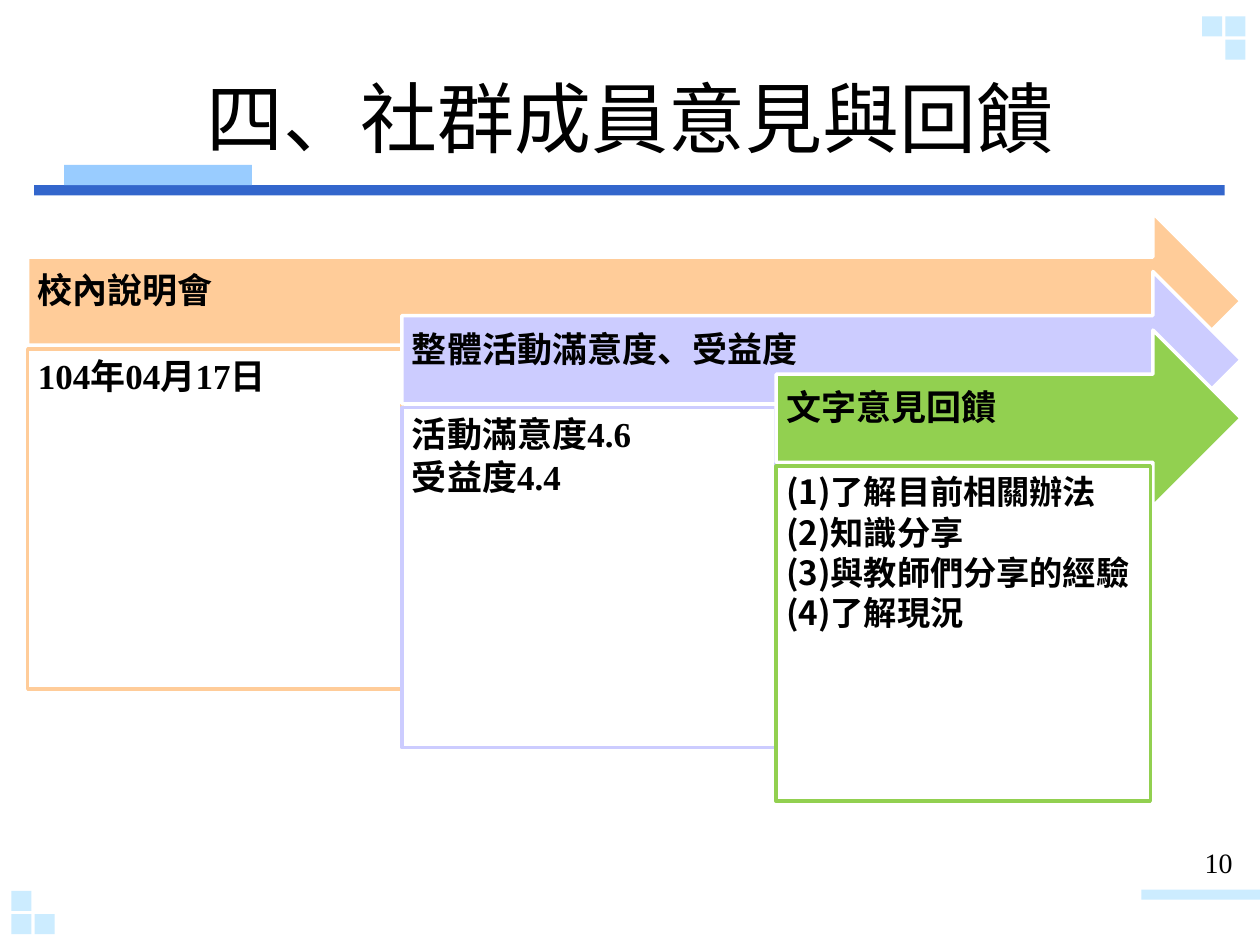
from pptx import Presentation
from pptx.dml.color import RGBColor
from pptx.enum.shapes import MSO_SHAPE
from pptx.enum.text import MSO_ANCHOR, PP_ALIGN
from pptx.oxml.ns import qn
from pptx.util import Inches, Pt

RECT, ARROW = MSO_SHAPE.RECTANGLE, MSO_SHAPE.RIGHT_ARROW
TOP, MIDDLE = MSO_ANCHOR.TOP, MSO_ANCHOR.MIDDLE
LEFT, CENTER, RIGHT = PP_ALIGN.LEFT, PP_ALIGN.CENTER, PP_ALIGN.RIGHT
CJK, LATIN = "Noto Sans CJK SC", "Times New Roman"
WHITE, BLACK, PALE = "FFFFFF", "000000", "CCECFF"

TITLE = "四、社群成員意見與回饋"
PAGE = "10"
# heading, body lines, colour, body font, body size, body height
STAGES = [
    ("校內說明會", ["104年04月17日"], "FFCC99", LATIN, 20, 2.7),
    ("整體活動滿意度、受益度", ["活動滿意度4.6", "受益度4.4"],
     "CCCCFF", LATIN, 20, 2.7),
    ("文字意見回饋",
     ["(1)了解目前相關辦法", "(2)知識分享", "(3)與教師們分享的經驗", "(4)了解現況"],
     "92D050", CJK, 19, 2.66),
]
BARS = [
    (0.27, 1.47, 9.45, 0.08, "3366CC"),
    (0.51, 1.31, 1.49, 0.16, "99CCFF"),
    (9.06, 7.06, 0.94, 0.08, PALE),
]
# corner left, corner top, (column, row) of each square
CORNERS = [
    (9.54, 0.13, [(0, 0), (1, 0), (1, 1)]),
    (0.09, 7.07, [(0, 0), (0, 1), (1, 1)]),
]
SQUARE, PITCH = 0.16, 0.185
STAGE_LEFT, STAGE_TOP, STAGE_RIGHT = 0.22, 1.69, 9.85
COL_W, ROW_STEP, ARROW_H, BODY_DROP = 2.97, 0.465, 1.4, 1.08
PAD = 0.08


def rgb(value):
    return RGBColor.from_string(value)


def write(shape, lines, size, font=CJK, bold=False, align=LEFT, anchor=TOP,
          insets=None, line_spacing=None, after=0):
    tf = shape.text_frame
    tf.word_wrap = True
    tf.vertical_anchor = anchor
    if insets:
        (tf.margin_left, tf.margin_top,
         tf.margin_right, tf.margin_bottom) = map(Inches, insets)
    for i, line in enumerate(lines):
        p = tf.add_paragraph() if i else tf.paragraphs[0]
        p.alignment = align
        p.space_before, p.space_after = Pt(0), Pt(after)
        if line_spacing:
            p.line_spacing = line_spacing
        r = p.add_run()
        r.text = line
        r.font.name, r.font.size, r.font.bold = font, Pt(size), bold
        r.font.color.rgb = rgb(BLACK)
        ea = r.font._element.makeelement(qn("a:ea"), {"typeface": CJK})
        r.font._element.find(qn("a:latin")).addnext(ea)


def add_shape(s, kind, x, y, w, h, fill, line=None):
    sp = s.shapes.add_shape(kind, *map(Inches, (x, y, w, h)))
    sp.shadow.inherit = False
    sp.fill.solid()
    sp.fill.fore_color.rgb = rgb(fill)
    if line:
        sp.line.color.rgb = rgb(line)
        sp.line.width = Pt(2)
    else:
        sp.line.fill.background()
    return sp


def add_decoration(s):
    for x, y, w, h, color in BARS:
        add_shape(s, RECT, x, y, w, h, color)
    for left, top, cells in CORNERS:
        for col, row in cells:
            add_shape(s, RECT, left + col * PITCH, top + row * PITCH,
                      SQUARE, SQUARE, PALE)


def add_stage(s, i, heading, lines, color, font, size, body_h):
    x, y = STAGE_LEFT + i * COL_W, STAGE_TOP + i * ROW_STEP
    arrow = add_shape(s, ARROW, x, y, STAGE_RIGHT - x, ARROW_H, color, WHITE)
    write(arrow, [heading], 20, bold=True, anchor=MIDDLE,
          insets=(PAD, PAD, 0.28, 0.22), line_spacing=0.9)
    body = add_shape(s, RECT, x, y + BODY_DROP, COL_W, body_h, WHITE, color)
    write(body, lines, size, font, bold=True, insets=(PAD,) * 4,
          line_spacing=0.9, after=2.5)


def main():
    prs = Presentation()
    prs.slide_width, prs.slide_height = Inches(10), Inches(7.5)
    s = prs.slides.add_slide(prs.slide_layouts[5])
    add_decoration(s)

    title = s.shapes.title
    title.left, title.top, title.width, title.height = map(
        Inches, (0.5, 0.3, 9, 1.25))
    write(title, [TITLE], 44, align=CENTER, anchor=MIDDLE)

    page = s.shapes.add_textbox(*map(Inches, (9.33, 6.66, 0.55, 0.39)))
    write(page, [PAGE], 16, LATIN, align=RIGHT)

    for i, stage in enumerate(STAGES):
        add_stage(s, i, *stage)
    prs.save("out.pptx")


if __name__ == "__main__":
    main()
